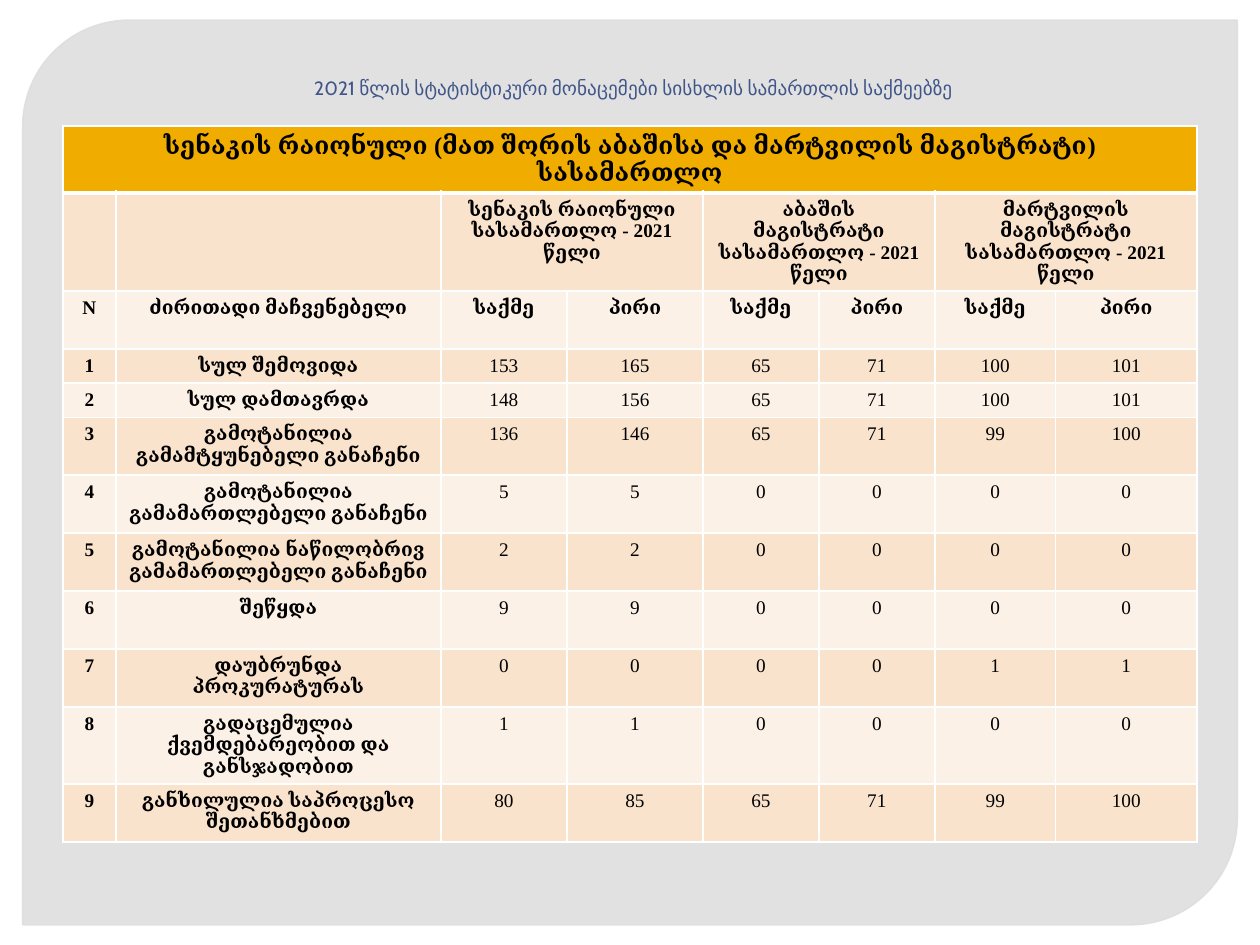
from lxml.etree import SubElement
from pptx import Presentation
from pptx.dml.color import RGBColor as RGB
from pptx.enum.shapes import MSO_SHAPE as SHAPE
from pptx.enum.text import MSO_ANCHOR as ANCHOR, MSO_AUTO_SIZE as FIT, PP_ALIGN as ALIGN
from pptx.oxml.ns import qn
from pptx.util import Inches, Pt

COLORS = {"panel": "D1D1D3", "edge": "DEDEE0", "title": "405688", "text": "000000",
          "header": "F0AD00", "dark": "F9E3CC", "light": "FCF1E7", "border": "FFFFFF"}
TITLE_FONT = {"name": "Cabin", "size": Pt(11), "bold": False}
HEADER_FONT = {"name": "Times New Roman", "size": Pt(14), "bold": True}
LABEL_FONT = {**HEADER_FONT, "size": Pt(11)}
VALUE_FONT = {**LABEL_FONT, "bold": False}

COLS = [0.42, 2.58, 1, 1.08, 0.92, 0.92, 0.96, 1.12]
ROWS = [0.46] * 3 + [0.27, 0.24] + [0.46] * 7
COURTS = ["სენაკის რაიონული სასამართლო - 2021 წელი",
          "აბაშის მაგისტრატი სასამართლო - 2021 წელი",
          "მარტვილის მაგისტრატი სასამართლო - 2021 წელი"]
INDICATORS = [
    ("სულ შემოვიდა", 153, 165, 65, 71, 100, 101),
    ("სულ დამთავრდა", 148, 156, 65, 71, 100, 101),
    ("გამოტანილია გამამტყუნებელი განაჩენი", 136, 146, 65, 71, 99, 100),
    ("გამოტანილია გამამართლებელი განაჩენი", 5, 5, 0, 0, 0, 0),
    ("გამოტანილია ნაწილობრივ გამამართლებელი განაჩენი", 2, 2, 0, 0, 0, 0),
    ("შეწყდა", 9, 9, 0, 0, 0, 0),
    ("დაუბრუნდა პროკურატურას", 0, 0, 0, 0, 1, 1),
    ("გადაცემულია ქვემდებარეობით და განსჯადობით", 1, 1, 0, 0, 0, 0),
    ("განხილულია საპროცესო შეთანხმებით", 80, 85, 65, 71, 99, 100),
]


def write(tf, text, fmt, color):
    p = tf.paragraphs[0]
    p.alignment = ALIGN.CENTER
    r = p.add_run()
    r.text = str(text)
    for name, value in fmt.items():
        setattr(r.font, name, value)
    r.font.color.rgb = RGB.from_string(COLORS[color])


def add_border(cell, side, width):
    ln = SubElement(cell._tc.get_or_add_tcPr(), qn(f"a:ln{side}"), w=str(Pt(width)))
    SubElement(SubElement(ln, qn("a:solidFill")), qn("a:srgbClr"), val=COLORS["border"])


prs = Presentation()
prs.slide_width, prs.slide_height = Inches(10), Inches(7.5)
W, H = prs.slide_width, prs.slide_height
s = prs.slides.add_slide(prs.slide_layouts[5])

panel = s.shapes.add_shape(SHAPE.ROUND_2_DIAG_RECTANGLE, Inches(0.18), Inches(0.16),
                           Inches(9.64), Inches(7.18))
panel.adjustments[0], panel.adjustments[1] = 0.118, 0
panel.shadow.inherit = False
panel.fill.solid()
panel.fill.fore_color.rgb = RGB.from_string(COLORS["panel"])
panel.line.color.rgb = RGB.from_string(COLORS["edge"])
panel.line.width = Pt(0.87)
for fill, alpha in zip(panel._element.spPr.iter(qn("a:srgbClr")), (65, 88)):
    SubElement(fill, qn("a:alpha"), val=str(alpha * 1000))
s.shapes._spTree.insert(2, panel._element)

title = s.shapes.title
title.left, title.top = int(W * 0.05), Inches(0.28)
title.width, title.height = int(W * 0.9), Inches(0.56)
tf = title.text_frame
for name, value in {"auto_size": FIT.NONE, "vertical_anchor": ANCHOR.BOTTOM,
                    "word_wrap": True}.items():
    setattr(tf, name, value)
write(tf, "2021 წლის სტატისტიკური მონაცემები სისხლის სამართლის საქმეებზე",
      TITLE_FONT, "title")
tf.paragraphs[0]._p.get_or_add_pPr().set("marL", str(Inches(0.06)))

table = s.shapes.add_table(len(ROWS), len(COLS), int(W * 0.05), Inches(1),
                           int(W * 0.9), Inches(sum(ROWS))).table
for column, width in zip(table.columns, COLS):
    column.width = Inches(width)
for row, height in zip(table.rows, ROWS):
    row.height = Inches(height)

for i, row in enumerate(table.rows):
    fill = "header" if i == 0 else "dark" if i % 2 else "light"
    for cell in row.cells:
        for side in "LRTB":
            add_border(cell, side, 3 if (i, side) in ((0, "B"), (1, "T")) else 1)
        cell.fill.solid()
        cell.fill.fore_color.rgb = RGB.from_string(COLORS[fill])

table.cell(0, 0).merge(table.cell(0, len(COLS) - 1))
write(table.cell(0, 0).text_frame,
      "სენაკის რაიონული (მათ შორის აბაშისა და მარტვილის მაგისტრატი) სასამართლო",
      HEADER_FONT, "text")
for i, court in enumerate(COURTS):
    col = 2 + 2 * i
    table.cell(1, col).merge(table.cell(1, col + 1))
    write(table.cell(1, col).text_frame, court, LABEL_FONT, "text")

body = [("N", "ძირითადი მაჩვენებელი") + ("საქმე", "პირი") * len(COURTS)]
body += [(n, *indicator) for n, indicator in enumerate(INDICATORS, 1)]
for i, values in enumerate(body):
    for j, value in enumerate(values):
        fmt = LABEL_FONT if i == 0 or j < 2 else VALUE_FONT
        write(table.cell(i + 2, j).text_frame, value, fmt, "text")

prs.save("out.pptx")
